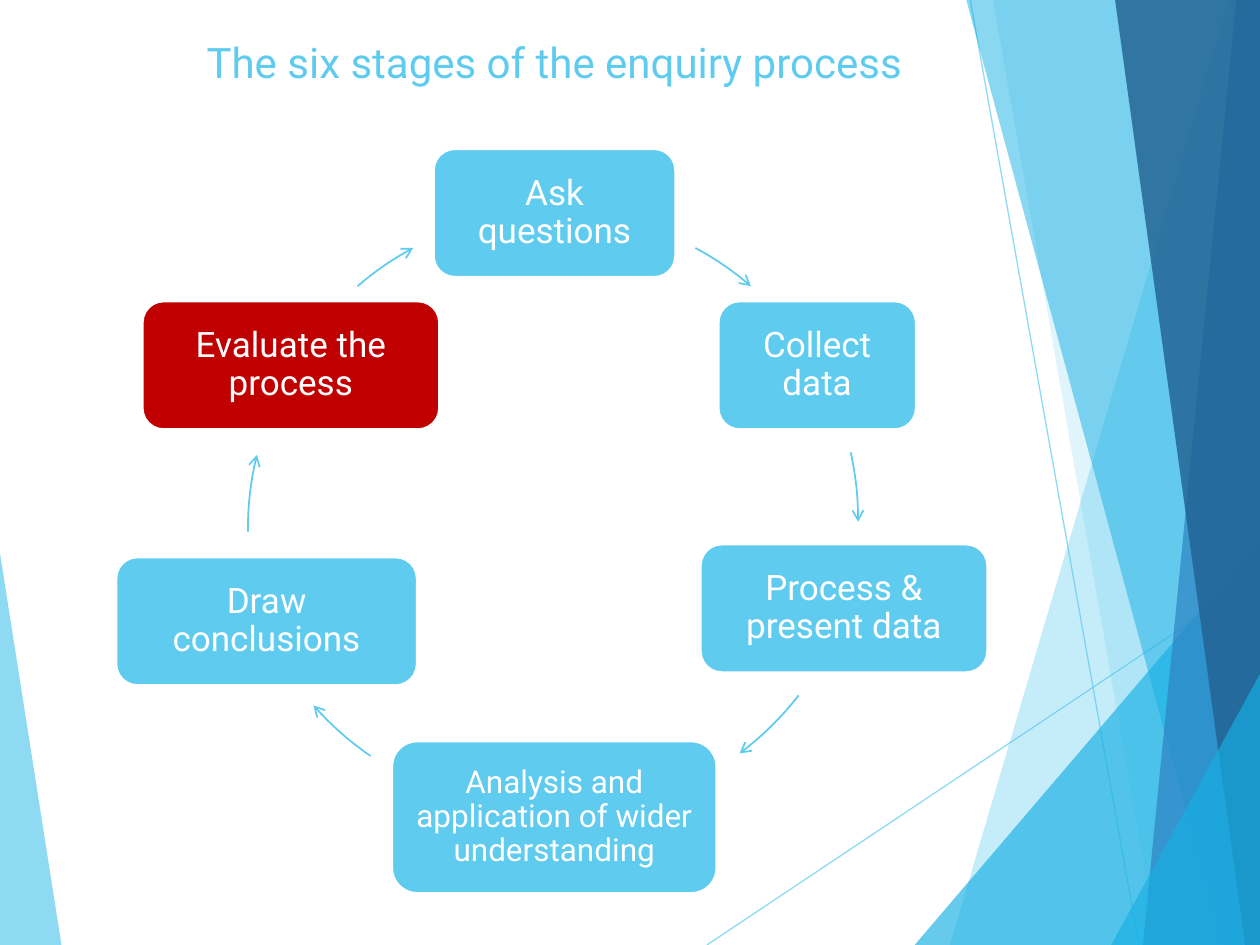
from dataclasses import dataclass
from math import hypot

from lxml.etree import SubElement
from pptx import Presentation
from pptx.dml.color import RGBColor
from pptx.enum.shapes import MSO_CONNECTOR, MSO_SHAPE
from pptx.enum.text import MSO_ANCHOR, PP_ALIGN
from pptx.oxml.ns import qn
from pptx.slide import Slide
from pptx.util import Cm, Pt

SKY = RGBColor(0x5F, 0xCB, 0xEF)
CYAN = RGBColor(0x17, 0xB0, 0xE4)
BLUE = RGBColor(0x2E, 0x83, 0xC3)
NAVY = RGBColor(0x22, 0x62, 0x92)
RED = RGBColor(0xC0, 0x00, 0x00)
WHITE = RGBColor(0xFF, 0xFF, 0xFF)
FONT = "Roboto"

RIGHT, BOTTOM = 25.4, 19.05
RADIUS = 6.12  # of the cycle that the arrows follow
ARC_STEPS = 8

Point = tuple[float, float]


@dataclass
class Facet:
    """A translucent panel; its corners are in centimetres."""
    corners: list[Point]
    color: RGBColor
    opacity: int


@dataclass
class Stage:
    text: str
    left: float
    top: float
    width: float
    arrow_start: Point
    arrow_end: Point
    height: float = 2.59
    size: int = 20
    fill: RGBColor = SKY


def band(top_x: float, bottom_x: float) -> list[Point]:
    """Full-height panel between a slanted edge and the right of the slide."""
    return [(top_x, 0), (bottom_x, BOTTOM), (RIGHT, BOTTOM), (RIGHT, 0)]


def corner(bottom_x: float, right_y: float) -> list[Point]:
    """Triangle in the bottom right corner."""
    return [(bottom_x, BOTTOM), (RIGHT, right_y), (RIGHT, BOTTOM)]


FACETS = [
    Facet([(0, 11.15), (1.24, BOTTOM), (0, BOTTOM)], SKY, 70),
    Facet(band(24.77, 19.15), SKY, 36),
    Facet(band(20.02, 23.34), SKY, 20),
    Facet(corner(18.44, 10.9), CYAN, 66),
    Facet(band(19.48, 24.64), CYAN, 50),
    Facet(band(24.92, 23.04), BLUE, 70),
    Facet(band(22.48, 25.1), NAVY, 82),
    Facet(corner(22.4, 13.59), CYAN, 66),
]
RAYS = [((14.25, BOTTOM), (RIGHT, 11.61)), ((19.56, 0), (22.96, BOTTOM))]

STAGES = [
    Stage("Ask questions", 8.74, 3, 4.88, (14.02, 5), (15.14, 5.77)),
    Stage("Collect data", 14.48, 6.07, 3.99, (17.15, 9.12), (17.3, 10.52)),
    Stage("Process & present data", 14.12, 10.97, 5.79,
          (16.1, 14.02), (14.91, 15.19)),
    Stage("Analysis and application of wider understanding", 7.9, 14.94, 6.55,
          (7.47, 15.24), (6.32, 14.22), height=3.07, size=18),
    Stage("Draw conclusions", 2.34, 11.23, 6.07, (5, 10.72), (5.18, 9.17)),
    Stage("Evaluate the process", 2.87, 6.07, 5.99,
          (7.21, 5.77), (8.33, 5), fill=RED),
]


def set_opacity(color_format, percent: int) -> None:
    clr = color_format._xFill.find(qn("a:srgbClr"))
    SubElement(clr, qn("a:alpha"), val=str(percent * 1000))


def add_outline(s: Slide, points: list[Point], close: bool):
    start, *rest = [(Cm(x), Cm(y)) for x, y in points]
    builder = s.shapes.build_freeform(*start)
    builder.add_line_segments(rest, close=close)
    sp = builder.convert_to_shape()
    sp.shadow.inherit = False
    return sp


def add_facet(s: Slide, facet: Facet) -> None:
    sp = add_outline(s, facet.corners, close=True)
    sp.fill.solid()
    sp.fill.fore_color.rgb = facet.color
    set_opacity(sp.fill.fore_color, facet.opacity)
    sp.line.fill.background()


def add_ray(s: Slide, start: Point, end: Point) -> None:
    ends = [Cm(v) for v in (*start, *end)]
    cxn = s.shapes.add_connector(MSO_CONNECTOR.STRAIGHT, *ends)
    cxn.line.width = Pt(0.75)
    cxn.line.color.rgb = SKY
    set_opacity(cxn.line.fill.fore_color, 70)
    SubElement(cxn._element.spPr, qn("a:effectLst"))


def add_arrow(s: Slide, start: Point, end: Point) -> None:
    """Clockwise arc, drawn as a chord that bulges away from the centre."""
    (x, y), dx, dy = start, end[0] - start[0], end[1] - start[1]
    curve = hypot(dx, dy) / (2 * RADIUS)
    points = []
    for i in range(ARC_STEPS + 1):
        t = i / ARC_STEPS
        bulge = curve * t * (1 - t)
        points.append((x + t * dx + bulge * dy, y + t * dy - bulge * dx))
    sp = add_outline(s, points, close=False)
    sp.fill.background()
    sp.line.color.rgb = SKY
    sp.line.width = Pt(1)
    SubElement(sp.line._get_or_add_ln(), qn("a:tailEnd"), type="arrow")


def add_text(tf, text: str, size: int, color: RGBColor, align: PP_ALIGN):
    p = tf.paragraphs[0]
    p.alignment = align
    r = p.add_run()
    r.text = text
    r.font.name = FONT
    r.font.size = Pt(size)
    r.font.color.rgb = color
    return p


def add_stage(s: Slide, stage: Stage) -> None:
    sp = s.shapes.add_shape(MSO_SHAPE.ROUNDED_RECTANGLE, Cm(stage.left),
                            Cm(stage.top), Cm(stage.width), Cm(stage.height))
    sp.shadow.inherit = False
    sp.fill.solid()
    sp.fill.fore_color.rgb = stage.fill
    sp.line.color.rgb = WHITE
    sp.line.width = Pt(1.5)
    tf = sp.text_frame
    tf.word_wrap = True
    tf.vertical_anchor = MSO_ANCHOR.MIDDLE
    tf.margin_left = tf.margin_right = Cm(0.2)
    tf.margin_top = tf.margin_bottom = Cm(0.2)
    p = add_text(tf, stage.text, stage.size, WHITE, PP_ALIGN.CENTER)
    p.line_spacing = 0.9


def format_title(s: Slide, text: str) -> None:
    title = s.shapes.title
    title.left, title.top = Cm(3.91), Cm(0.61)
    title.width, title.height = Cm(17.63), Cm(3.66)
    tf = title.text_frame
    tf.word_wrap = True
    tf.vertical_anchor = MSO_ANCHOR.TOP
    add_text(tf, text, 24, SKY, PP_ALIGN.LEFT)


def main() -> None:
    prs = Presentation()
    prs.slide_width, prs.slide_height = Cm(RIGHT), Cm(BOTTOM)
    s = prs.slides.add_slide(prs.slide_layouts.get_by_name("Title Only"))
    format_title(s, "The six stages of the enquiry process")
    for start, end in RAYS:
        add_ray(s, start, end)
    for facet in FACETS:
        add_facet(s, facet)
    for stage in STAGES:
        add_stage(s, stage)
        add_arrow(s, stage.arrow_start, stage.arrow_end)
    prs.save("out.pptx")


if __name__ == "__main__":
    main()
